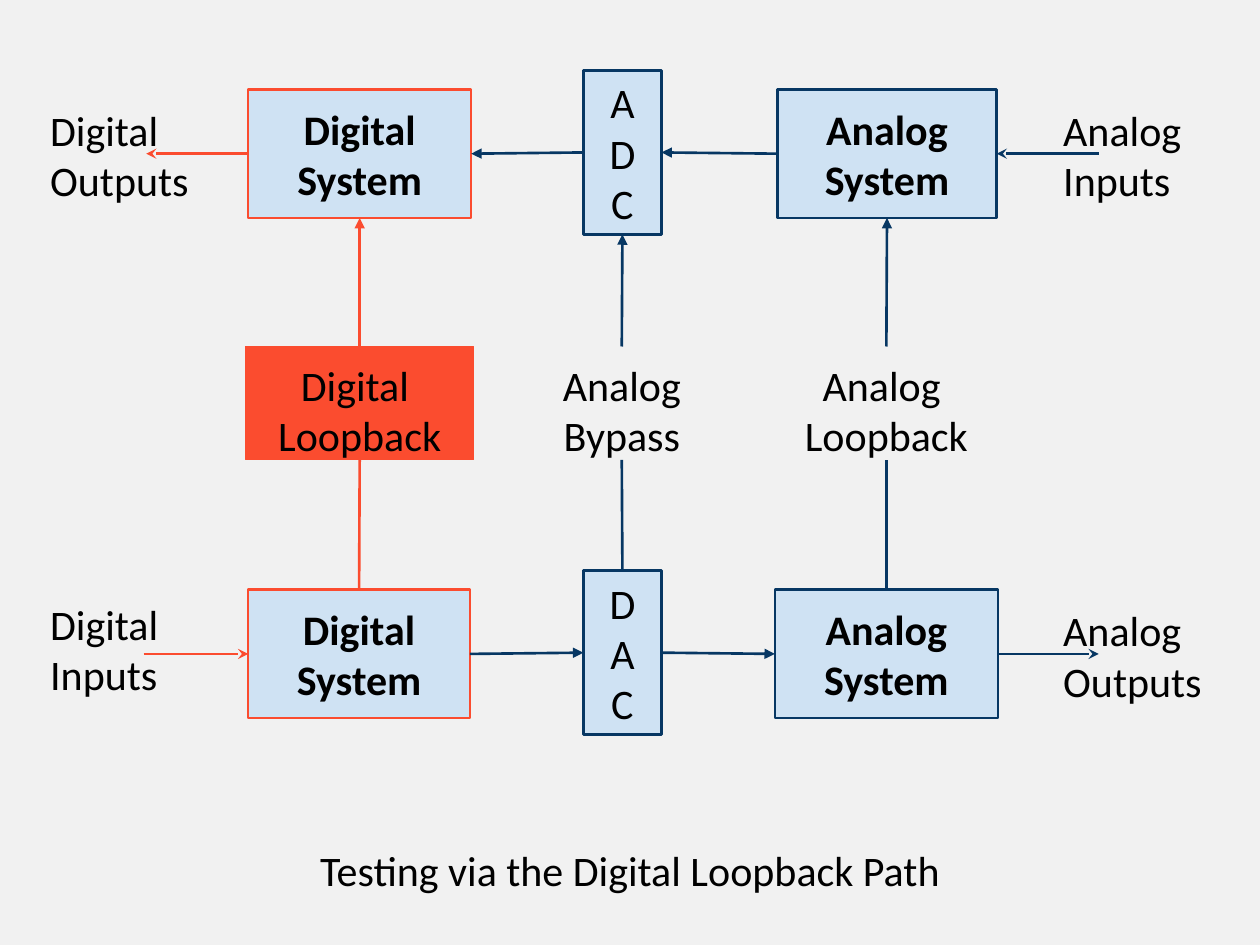
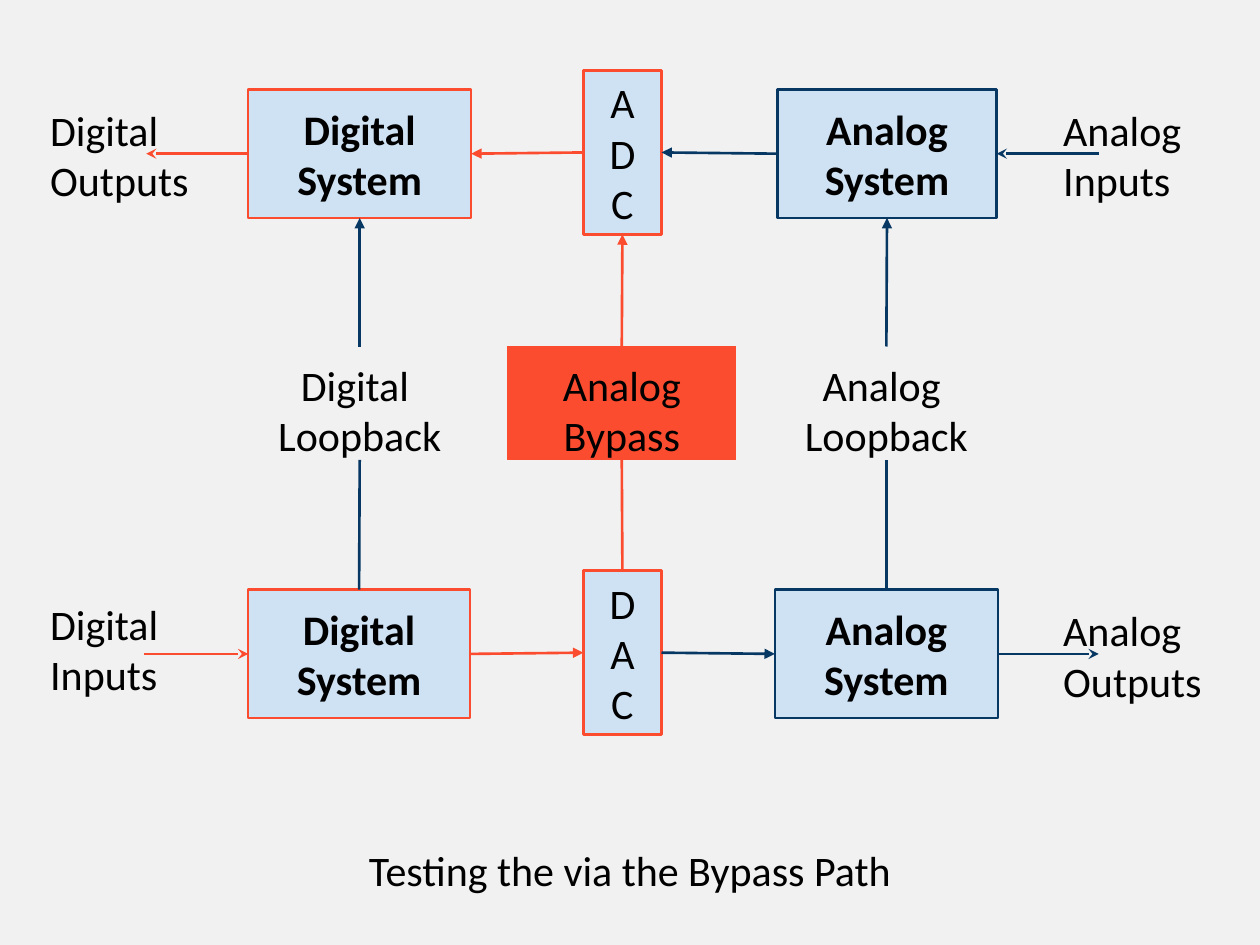
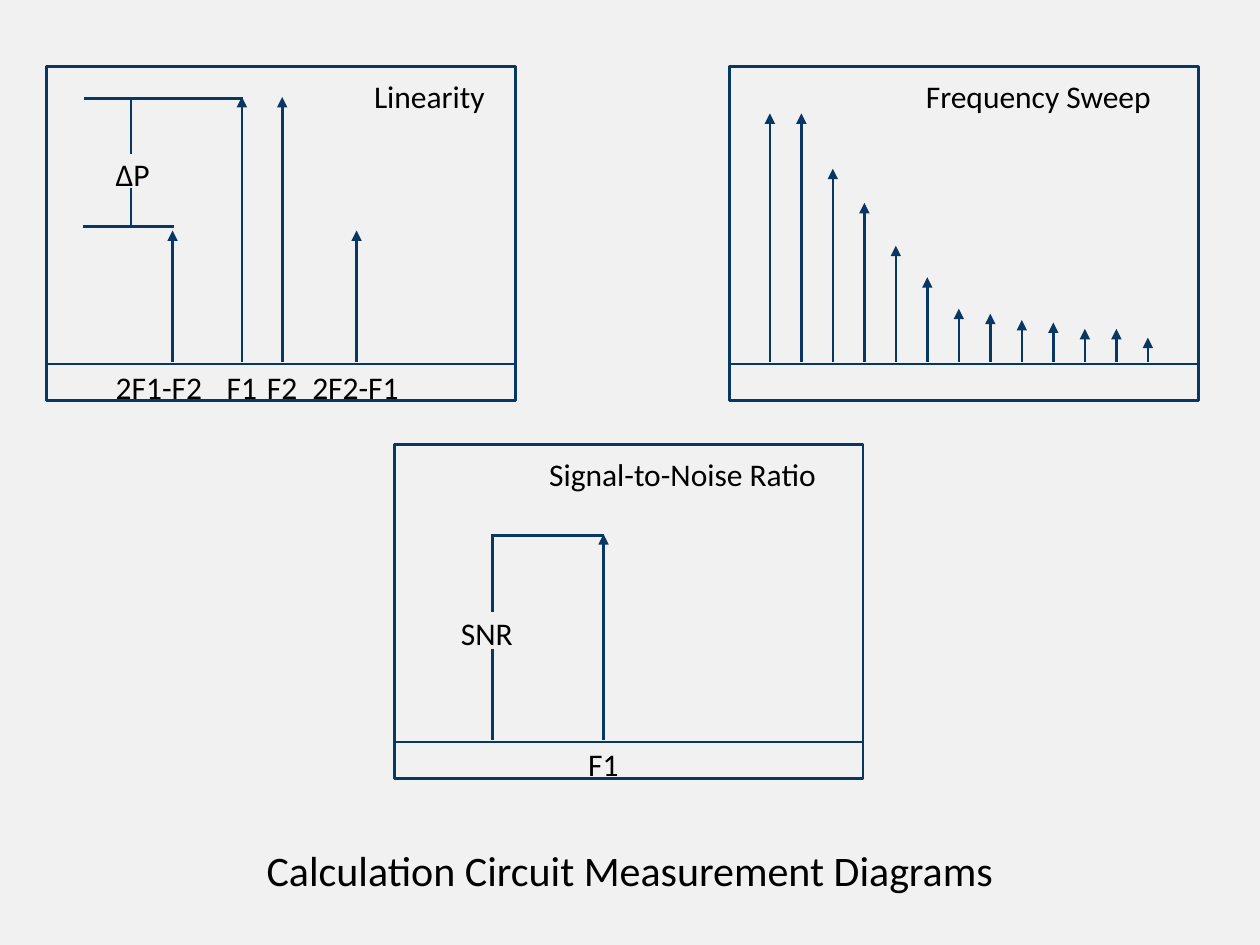
from dataclasses import dataclass

from lxml.etree import SubElement
from pptx import Presentation
from pptx.dml.color import RGBColor
from pptx.enum.shapes import MSO_CONNECTOR as Connector, MSO_SHAPE as Shape
from pptx.enum.text import MSO_ANCHOR as Anchor, PP_ALIGN as Align
from pptx.oxml.ns import qn
from pptx.util import Inches, Pt

TOP, LEFT, BOTTOM, RIGHT = range(4)


@dataclass(frozen=True)
class Theme:
    """Colours, font and sizes shared by all slides."""
    background: RGBColor = RGBColor(0xF1, 0xF1, 0xF1)
    block: RGBColor = RGBColor(0xCF, 0xE2, 0xF3)
    navy: RGBColor = RGBColor(0x07, 0x37, 0x63)
    active: RGBColor = RGBColor(0xFB, 0x4C, 0x2F)
    text: RGBColor = RGBColor(0x00, 0x00, 0x00)
    font: str = "Calibri"
    large: int = 24
    small: int = 18
    stroke: float = 1.5
    thin: float = 0.75
    inset: float = 0.1


class Deck:
    """Draws styled elements on the current slide."""

    def __init__(self, theme):
        """Start a presentation with the theme background."""
        self.theme = theme
        self.prs = Presentation()
        self.prs.slide_width, self.prs.slide_height = Inches(10), Inches(7.5)
        fill = self.prs.slide_master.background.fill
        fill.solid()
        fill.fore_color.rgb = theme.background

    def slide(self, caption):
        """Add a slide with its caption in the body placeholder."""
        layout = self.prs.slide_layouts.get_by_name("Section Header")
        self.current = self.prs.slides.add_slide(layout)
        self.canvas = self.current.shapes
        title = self.canvas.title.element
        title.getparent().remove(title)
        body = self.current.placeholders[1]
        body.left, body.top = Inches(0.3), Inches(6.6)
        body.width, body.height = Inches(9.4), Inches(0.6)
        self.set_text(body, caption, self.theme.large, Align.CENTER, Anchor.MIDDLE)

    def group(self):
        """Collect the following elements in a new group."""
        self.canvas = self.current.shapes.add_group_shape().shapes

    def set_text(self, holder, text, size, align=Align.LEFT, anchor=Anchor.TOP, bold=False):
        """Put formatted text in a shape."""
        frame = holder.text_frame
        frame.word_wrap = True
        frame.vertical_anchor = anchor
        frame.margin_left = frame.margin_right = Inches(self.theme.inset)
        frame.margin_top = frame.margin_bottom = Inches(self.theme.inset)
        paragraph = frame.paragraphs[0]
        paragraph.text = text
        paragraph.alignment = align
        paragraph.space_before = Pt(0)
        font = paragraph.font
        font.name, font.size, font.bold = self.theme.font, Pt(size), bold
        font.color.rgb = self.theme.text

    def box(self, left, top, width, height, color, fill=None, stroke=None):
        """Add an outlined rectangle."""
        rect = self.canvas.add_shape(
            Shape.RECTANGLE, Inches(left), Inches(top), Inches(width), Inches(height))
        rect.shadow.inherit = False
        if fill is None:
            rect.fill.background()
        else:
            rect.fill.solid()
            rect.fill.fore_color.rgb = fill
        rect.line.color.rgb = color
        rect.line.width = Pt(stroke or self.theme.stroke)
        return rect

    def block(self, left, top, width, height, text, color, bold=False):
        """Add a circuit block with centred text."""
        block = self.box(left, top, width, height, color, self.theme.block)
        self.set_text(block, text, self.theme.large, Align.CENTER, Anchor.MIDDLE, bold)
        return block

    def label(self, left, top, width, height, text, size, align=Align.LEFT):
        """Add a plain text label."""
        label = self.canvas.add_textbox(
            Inches(left), Inches(top), Inches(width), Inches(height))
        self.set_text(label, text, size, align)
        return label

    def route(self, left, text, color):
        """Add the name of a test route, filled when it is active."""
        place = left, 2.75, 1.81, 0.9
        if color == self.theme.active:
            route = self.box(*place, color, color, self.theme.thin)
            self.set_text(route, text, self.theme.large, Align.CENTER)
            return route
        return self.label(*place, text, self.theme.large, Align.CENTER)

    def line(self, x1, y1, x2, y2, color, tip=None):
        """Add a straight line with an optional arrowhead at its end."""
        line = self.canvas.add_connector(
            Connector.STRAIGHT, Inches(x1), Inches(y1), Inches(x2), Inches(y2))
        line.line.color.rgb = color
        line.line.width = Pt(self.theme.stroke)
        properties = line.element.spPr
        if tip:
            SubElement(properties.find(qn("a:ln")), qn("a:tailEnd"), type=tip)
        SubElement(properties, qn("a:effectLst"))
        return line

    def link(self, source, exit_side, target, entry_side, color, tip="triangle"):
        """Join the sides of two blocks."""
        link = self.line(0, 0, 0, 0, color, tip)
        link.begin_connect(source, exit_side)
        link.end_connect(target, entry_side)

    def panel(self, left, top, title, title_left, title_width):
        """Start a grouped spectrum panel with frame, axis and title."""
        self.group()
        self.box(left, top, 3.72, 2.65, self.theme.navy)
        self.line(left, top + 2.36, left + 3.72, top + 2.36, self.theme.navy)
        self.label(title_left, top - 0.02, title_width, 0.37, title, self.theme.small)

    def tones(self, foot, peaks):
        """Draw an upward arrow for each (x, peak) pair."""
        for x, peak in peaks:
            self.line(x, foot, x, peak, self.theme.navy, "triangle")


def loopback_slide(deck, caption, digital_route, bypass_route):
    """Draw the mixed-signal circuit with its routes in the given colours."""
    navy, active, size = deck.theme.navy, deck.theme.active, deck.theme.large
    deck.slide(caption)

    digital_out = deck.block(1.97, 0.71, 1.77, 1.02, "Digital\nSystem", active, True)
    digital_in = deck.block(1.97, 4.68, 1.76, 1.02, "Digital\nSystem", active, True)
    analog_in = deck.block(6.17, 0.71, 1.74, 1.02, "Analog\nSystem", navy, True)
    analog_out = deck.block(6.15, 4.68, 1.77, 1.02, "Analog\nSystem", navy, True)
    adc = deck.block(4.63, 0.56, 0.62, 1.3, "A\nD\nC", bypass_route)
    dac = deck.block(4.63, 4.53, 0.62, 1.3, "D\nA\nC", bypass_route)

    deck.link(analog_in, LEFT, adc, RIGHT, navy)
    deck.link(adc, LEFT, digital_out, RIGHT, bypass_route)
    deck.link(digital_in, RIGHT, dac, LEFT, bypass_route)
    deck.link(dac, RIGHT, analog_out, LEFT, navy)

    deck.line(1.97, 1.22, 1.16, 1.22, active, "stealth").begin_connect(digital_out, LEFT)
    deck.line(1.14, 5.19, 1.97, 5.19, active, "stealth").end_connect(digital_in, LEFT)
    deck.line(8.72, 1.22, 7.92, 1.22, navy, "stealth").end_connect(analog_in, RIGHT)
    deck.line(7.92, 5.19, 8.72, 5.19, navy, "stealth").begin_connect(analog_out, RIGHT)

    for left, top, width, text in (
        (0.3, 4.65, 1.2, "Digital Inputs"),
        (0.3, 0.73, 1.7, "Digital Outputs"),
        (8.34, 0.73, 1.53, "Analog Inputs"),
        (8.34, 4.7, 1.53, "Analog Outputs"),
    ):
        deck.label(left, top, width, 0.98, text, size)

    for left, text, color, source, target in (
        (6.13, "Analog \nLoopback", navy, analog_out, analog_in),
        (1.95, "Digital \nLoopback", digital_route, digital_in, digital_out),
        (4.03, "Analog Bypass", bypass_route, dac, adc),
    ):
        route = deck.route(left, text, color)
        deck.link(source, TOP, route, BOTTOM, color, None)
        deck.link(route, TOP, target, BOTTOM, color)


def measurement_slide(deck):
    """Draw the three spectrum measurement panels."""
    navy, size = deck.theme.navy, deck.theme.small
    deck.slide("Calculation Circuit Measurement Diagrams")

    deck.panel(3.13, 3.53, "Signal-to-Noise Ratio", 4.26, 2.61)
    deck.tones(5.87, [(4.79, 4.24)])
    for ends in ((4.79, 4.25, 3.9, 4.25), (3.91, 4.24, 3.91, 4.86), (3.91, 5.15, 3.91, 5.87)):
        deck.line(*ends, navy)
    deck.label(4.57, 5.81, 0.52, 0.4, "F1", size)
    deck.label(3.56, 4.77, 0.75, 0.29, "SNR", size)

    deck.panel(5.79, 0.53, "Frequency Sweep", 7.25, 2.26)
    sweep = (0.9, 0.9, 1.34, 1.61, 1.95, 2.2, 2.45, 2.49, 2.54, 2.56, 2.61, 2.61, 2.68)
    deck.tones(2.87, [(6.11 + 0.25 * step, peak) for step, peak in enumerate(sweep)])

    deck.panel(0.37, 0.53, "Linearity", 2.87, 1.21)
    deck.tones(2.87, [(1.37, 1.83), (1.92, 0.77), (2.24, 0.77), (2.83, 1.83)])
    for left, width, text in (
        (0.82, 0.92, "2F1-F2"),
        (1.7, 0.45, "F1"),
        (2.02, 0.45, "F2"),
        (2.38, 0.91, "2F2-F1"),
    ):
        deck.label(left, 2.82, width, 0.44, text, size)
    for ends in (
        (1.93, 0.78, 0.67, 0.78),
        (1.38, 1.8, 0.66, 1.8),
        (1.04, 0.79, 1.04, 1.22),
        (1.04, 1.49, 1.04, 1.8),
    ):
        deck.line(*ends, navy)
    deck.label(0.82, 1.13, 0.53, 0.36, "ΔP", size)


def main():
    """Build and save the three slides."""
    theme = Theme()
    deck = Deck(theme)
    loopback_slide(deck, "Testing via the Digital Loopback Path", theme.active, theme.navy)
    loopback_slide(deck, "Testing the via the Bypass Path", theme.navy, theme.active)
    measurement_slide(deck)
    deck.prs.save("out.pptx")


if __name__ == "__main__":
    main()
